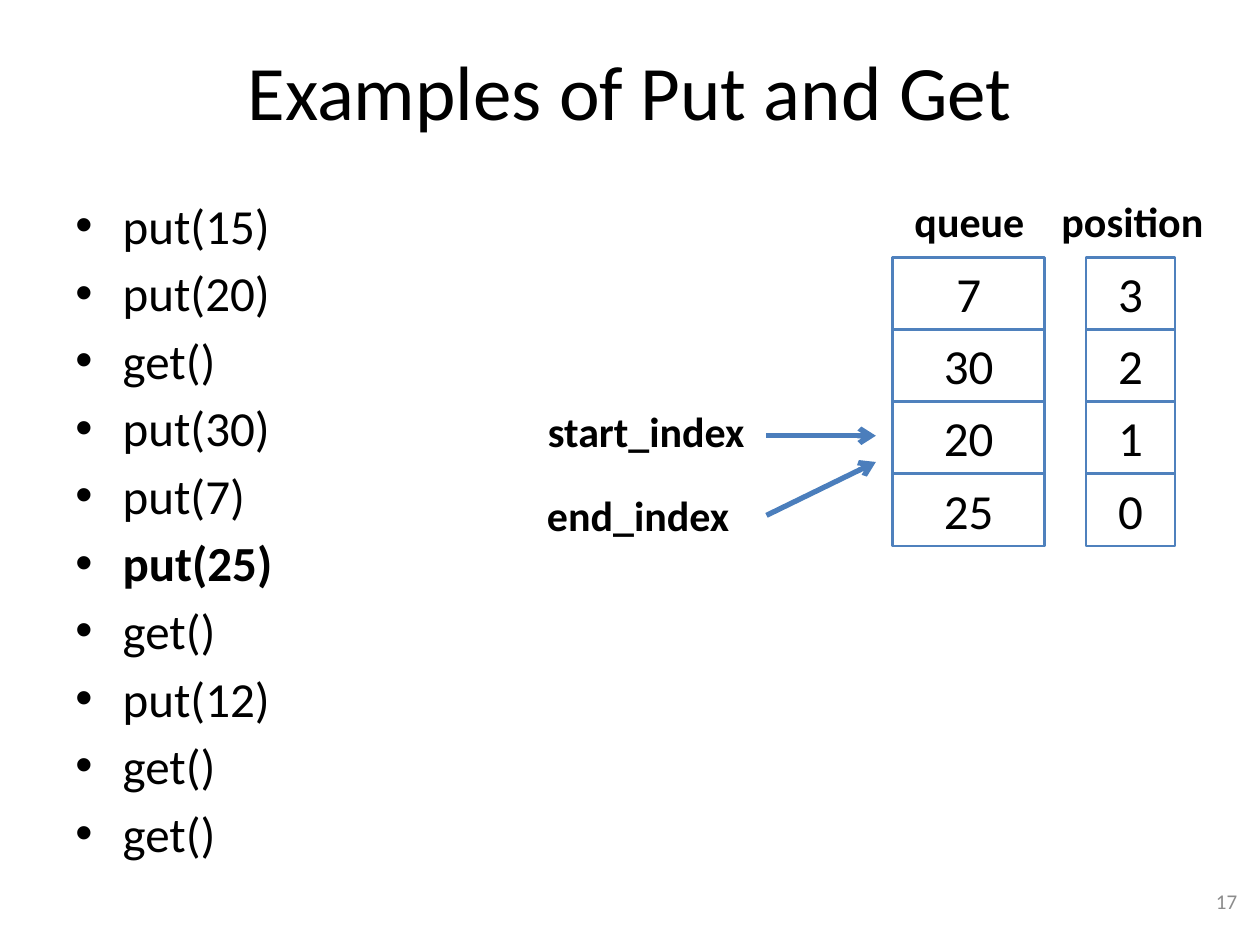
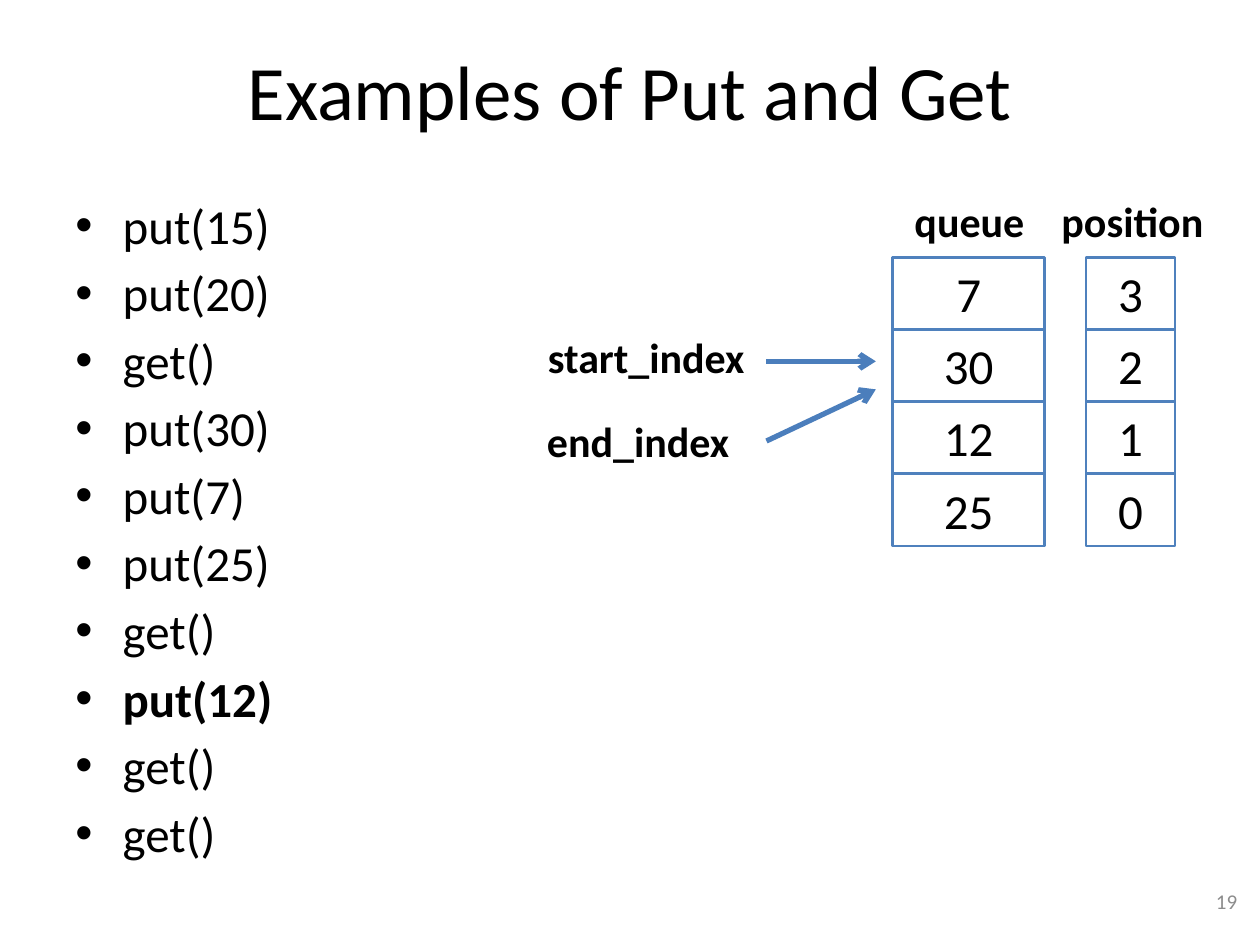
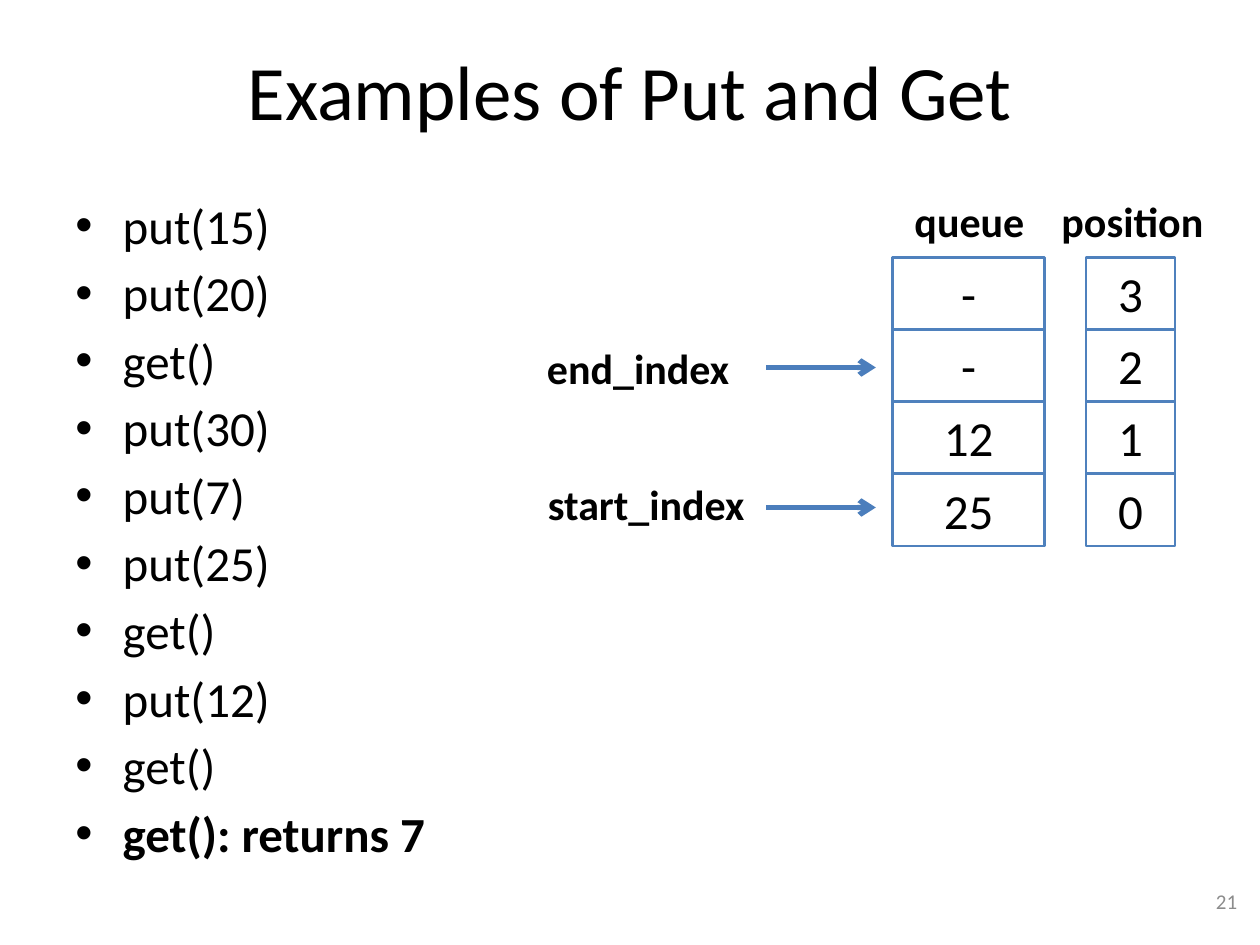
from dataclasses import dataclass

from lxml.etree import SubElement
from pptx import Presentation
from pptx.dml.color import RGBColor
from pptx.enum.shapes import MSO_CONNECTOR, MSO_SHAPE
from pptx.enum.text import MSO_ANCHOR, MSO_AUTO_SIZE, PP_ALIGN
from pptx.oxml.ns import qn
from pptx.util import Pt

FONT = "Calibri"
BLACK = RGBColor(0x00, 0x00, 0x00)
GRAY = RGBColor(0x8C, 0x8C, 0x8C)
CELL_BLUE = RGBColor(0x4F, 0x81, 0xBD)
ARROW_BLUE = RGBColor(0x4B, 0x7E, 0xBC)

TITLE = "Examples of Put and Get"
OPERATIONS = ["put(15)", "put(20)", "get()", "put(30)", "put(7)",
              "put(25)", "get()", "put(12)", "get()", "get()"]
POSITIONS = ["3", "2", "1", "0"]

# Boxes are left, top, width, height in points.
TITLE_BOX = (36, 6, 648, 90)
OPERATIONS_BOX = (36, 108, 264, 396)
NUMBER_BOX = (546, 500.5, 168, 28.75)
QUEUE_BOX = (510, 147, 87, 165)
POSITION_BOX = (620.5, 147, 51, 165)
QUEUE_HEADING_BOX = (515.5, 108, 78, 36)
POSITION_HEADING_BOX = (599.5, 108, 97, 36)
ARROW_LEFT, ARROW_RIGHT = 438, 500.5


@dataclass
class Pointer:
    """An index label and its arrow, with vertical places in points."""
    name: str
    left: float
    width: float
    label_top: float
    arrow_start: float
    arrow_end: float


def start_index(label_top, arrow):
    return Pointer("start_index", 306, 128, label_top, arrow, arrow)


def end_index(label_top, arrow_start, arrow_end):
    return Pointer("end_index", 305.5, 119.5, label_top, arrow_start, arrow_end)


@dataclass
class Step:
    number: int
    current: int
    queue: list
    pointers: list
    result: str = ""


STEPS = [
    Step(17, 5, ["7", "30", "20", "25"],
         [start_index(228, 249), end_index(276, 294.5, 264)]),
    Step(19, 7, ["7", "30", "12", "25"],
         [start_index(186, 206.5), end_index(234, 252, 222.5)]),
    Step(21, 9, ["-", "-", "12", "25"],
         [start_index(270, 290), end_index(192, 210, 210)], ": returns 7"),
]


def to_points(box):
    return [Pt(length) for length in box]


def style(para, size, color=BLACK, bold=False, align=PP_ALIGN.LEFT):
    para.alignment = align
    font = para.font
    font.name, font.size, font.bold = FONT, Pt(size), bold
    font.color.rgb = color


def add_text(page, box, text, size, wrap=True, **looks):
    frame = page.shapes.add_textbox(*to_points(box)).text_frame
    frame.word_wrap = wrap
    frame.vertical_anchor = MSO_ANCHOR.MIDDLE
    frame.text = text
    style(frame.paragraphs[0], size, **looks)
    return frame


def add_label(page, box, text):
    frame = add_text(page, box, text, 24, wrap=False, bold=True)
    frame.vertical_anchor = MSO_ANCHOR.TOP
    frame.auto_size = MSO_AUTO_SIZE.SHAPE_TO_FIT_TEXT


def add_bullet(para):
    properties = para._p.get_or_add_pPr()
    properties.set("marL", str(Pt(27)))
    properties.set("indent", str(-Pt(27)))
    SubElement(properties, qn("a:buFont"), typeface="Arial")
    SubElement(properties, qn("a:buChar"), char="•")


def add_operations(page, box, step):
    """List all operations, with the current one in bold."""
    frame = page.shapes.add_textbox(*to_points(box)).text_frame
    frame.word_wrap = True
    lines = list(OPERATIONS)
    lines[step.current] += step.result
    frame.text = "\n".join(lines)
    for index, para in enumerate(frame.paragraphs):
        style(para, 28, bold=index == step.current)
        para.space_before = Pt(5)
        add_bullet(para)


def add_cells(page, box, values):
    """Stack one bordered cell for each value, drawn from the bottom up."""
    left, top, width, height = box
    cell_height = height / len(values)
    group = page.shapes.add_group_shape()
    for row, value in reversed(list(enumerate(values))):
        cell_box = (left, top + row * cell_height, width, cell_height)
        cell = group.shapes.add_shape(MSO_SHAPE.RECTANGLE, *to_points(cell_box))
        cell.shadow.inherit = False
        cell.fill.background()
        cell.line.color.rgb = CELL_BLUE
        cell.line.width = Pt(1.5)
        frame = cell.text_frame
        frame.word_wrap = True
        frame.auto_size = MSO_AUTO_SIZE.SHAPE_TO_FIT_TEXT
        frame.vertical_anchor = MSO_ANCHOR.TOP
        frame.text = value
        style(frame.paragraphs[0], 28, align=PP_ALIGN.CENTER)


def add_pointer(page, pointer):
    add_label(page, (pointer.left, pointer.label_top, pointer.width, 36), pointer.name)
    arrow = page.shapes.add_connector(
        MSO_CONNECTOR.STRAIGHT, Pt(ARROW_LEFT), Pt(pointer.arrow_start),
        Pt(ARROW_RIGHT), Pt(pointer.arrow_end))
    arrow.line.color.rgb = ARROW_BLUE
    arrow.line.width = Pt(3)
    SubElement(arrow.line._get_or_add_ln(), qn("a:tailEnd"), type="arrow")
    SubElement(arrow._element.spPr, qn("a:effectLst"))


def add_step_page(deck, step):
    page = deck.slides.add_slide(deck.slide_layouts[6])
    add_text(page, TITLE_BOX, TITLE, 44, align=PP_ALIGN.CENTER)
    add_operations(page, OPERATIONS_BOX, step)
    add_text(page, NUMBER_BOX, str(step.number), 12, color=GRAY, align=PP_ALIGN.RIGHT)
    add_cells(page, QUEUE_BOX, step.queue)
    add_label(page, QUEUE_HEADING_BOX, "queue")
    add_label(page, POSITION_HEADING_BOX, "position")
    add_cells(page, POSITION_BOX, POSITIONS)
    for pointer in step.pointers:
        add_pointer(page, pointer)


def main():
    deck = Presentation()
    deck.slide_width, deck.slide_height = Pt(720), Pt(540)
    for step in STEPS:
        add_step_page(deck, step)
    deck.save("out.pptx")


if __name__ == "__main__":
    main()
